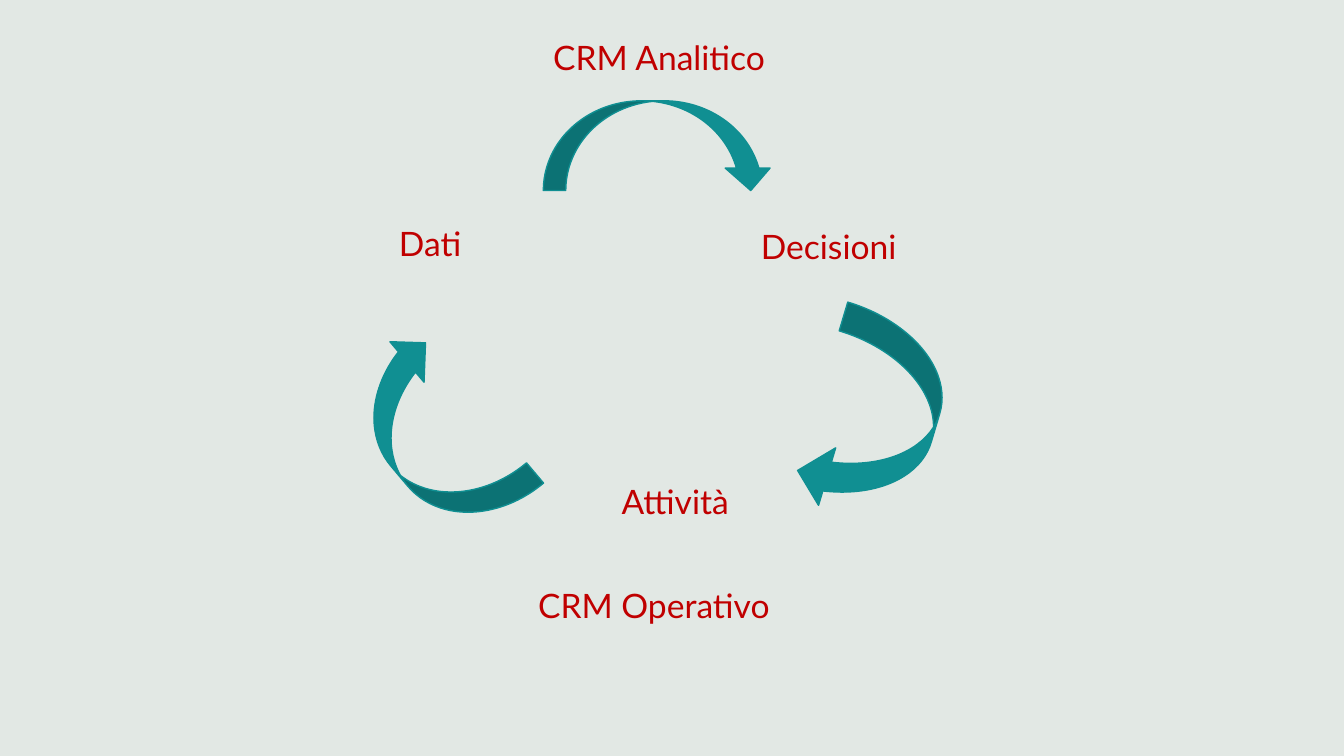
import pptx
import pptx.util
import pptx.dml.color
import pptx.enum.shapes
import pptx.enum.text

Pt = pptx.util.Pt

arrows = [
    (236.2, 274.3, 149.8, 75.6, 229.9),
    (552.2, 255.6, 146.9, 85.7, 106.6),
    (388.1, 72, 164.2, 64.1, 0),
]
labels = [
    ("CRM Analitico", 388.1, 23, 175.7),
    ("Dati", 277.9, 155.5, 74.2),
    ("Decisioni", 536.4, 157.7, 143.3),
    ("Attività", 437, 339.8, 114.5),
    ("CRM Operativo", 377.3, 414, 205.2),
]
style = {"name": "Lato", "size": Pt(24)}
tall = 36


def color(code):
    return pptx.dml.color.RGBColor.from_string(code)


def paint(fill, code):
    fill.solid()
    fill.fore_color.rgb = color(code)


deck = pptx.Presentation()
deck.slide_width, deck.slide_height = Pt(960), Pt(540)
slide = deck.slides.add_slide(deck.slide_layouts[6])
paint(slide.background.fill, "E2E8E4")

for left, top, wide, high, turn in arrows:
    arrow = slide.shapes.add_shape(
        pptx.enum.shapes.MSO_SHAPE.CURVED_DOWN_ARROW,
        Pt(left), Pt(top), Pt(wide), Pt(high))
    arrow.rotation = turn
    arrow.shadow.inherit = False
    paint(arrow.fill, "108F92")
    paint(arrow.line.fill, "108F92")
    arrow.line.width = Pt(1)

for text, left, top, wide in labels:
    box = slide.shapes.add_textbox(Pt(left), Pt(top), Pt(wide), Pt(tall))
    frame = box.text_frame
    frame.word_wrap = True
    frame.auto_size = pptx.enum.text.MSO_AUTO_SIZE.SHAPE_TO_FIT_TEXT
    run = frame.paragraphs[0].add_run()
    run.text = text
    for key, value in style.items():
        setattr(run.font, key, value)
    run.font.color.rgb = color("C00000")

deck.save("out.pptx")
